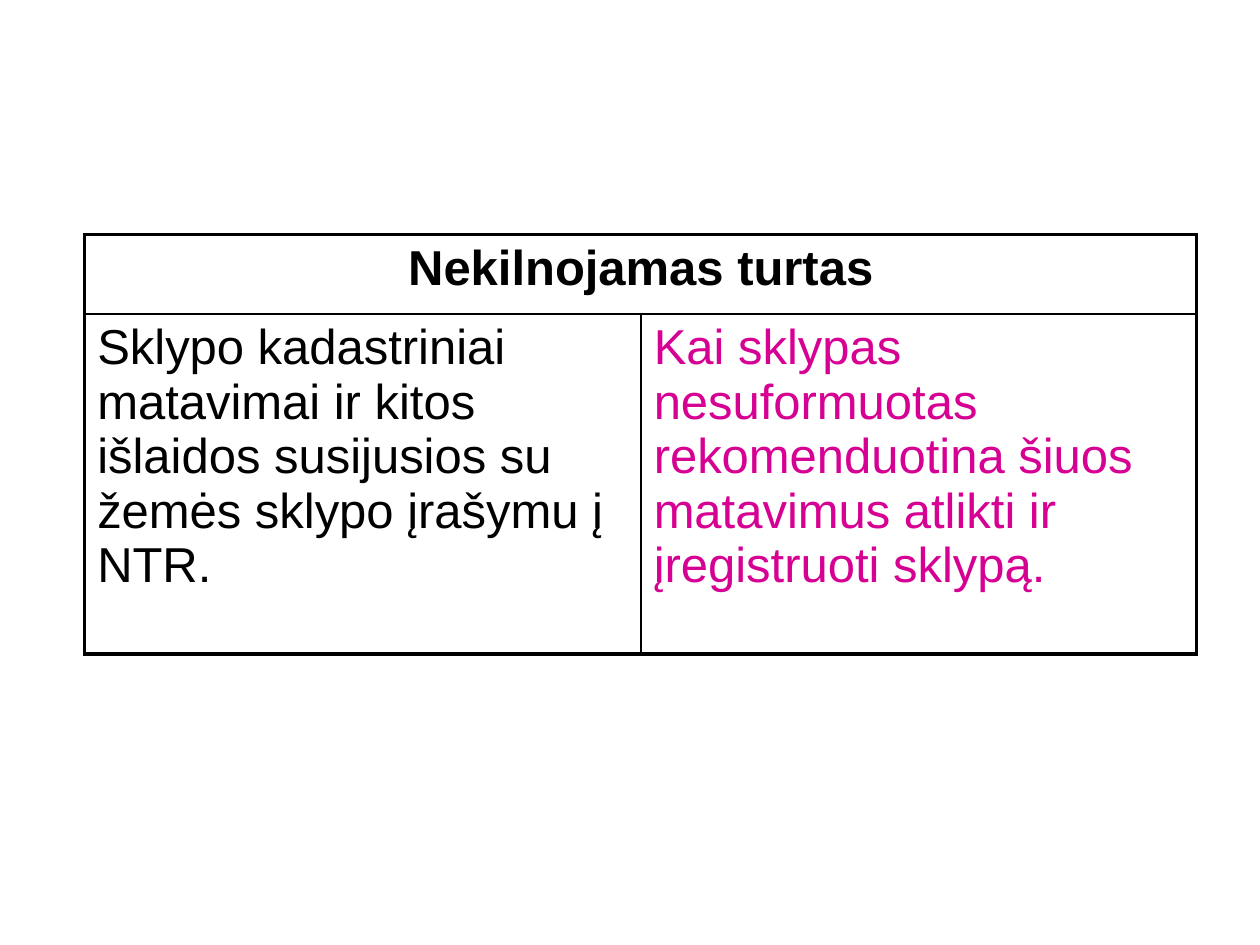
from dataclasses import dataclass

import pptx
import pptx.dml.color
import pptx.enum.text
import pptx.oxml
import pptx.oxml.ns
import pptx.table
import pptx.util

Pt = pptx.util.Pt
Align = pptx.enum.text.PP_ALIGN
BLACK, MAGENTA = "000000", "D60093"
OUTER, INNER = 2.25, 1
COLUMN_WIDTHS = (318, 317.5)
ROW_HEIGHTS = (45.4, 194.4)


@dataclass
class Entry:
    row: int
    column: int
    text: str
    color: str = BLACK
    bold: bool = False
    align: Align = Align.LEFT


ENTRIES = (
    Entry(0, 0, "Nekilnojamas turtas", bold=True, align=Align.CENTER),
    Entry(1, 0, "Sklypo kadastriniai matavimai ir kitos išlaidos susijusios su "
                "žemės sklypo įrašymu į NTR."),
    Entry(1, 1, "Kai sklypas nesuformuotas rekomenduotina šiuos matavimus atlikti ir "
                "įregistruoti sklypą.", color=MAGENTA),
)


def rgb(color: str) -> pptx.dml.color.RGBColor:
    return pptx.dml.color.RGBColor.from_string(color)


def draw_borders(cell: pptx.table._Cell, widths: dict[str, float]) -> None:
    properties = cell._tc.get_or_add_tcPr()
    for position, (side, width) in enumerate(widths.items()):
        border = pptx.oxml.parse_xml(
            f'<a:ln{side} {pptx.oxml.ns.nsdecls("a")} w="{int(Pt(width))}">'
            f'<a:solidFill><a:srgbClr val="{BLACK}"/></a:solidFill></a:ln{side}>'
        )
        properties.insert(position, border)


def write_entry(table: pptx.table.Table, entry: Entry) -> None:
    paragraph = table.cell(entry.row, entry.column).text_frame.paragraphs[0]
    paragraph.alignment = entry.align
    run = paragraph.add_run()
    run.text = entry.text
    run.font.name = "Arial"
    run.font.size = Pt(28)
    run.font.bold = entry.bold
    run.font.color.rgb = rgb(entry.color)


def main() -> None:
    """Build the slide with the real estate table."""
    deck = pptx.Presentation()
    deck.slide_width, deck.slide_height = Pt(720), Pt(540)
    slide = deck.slides.add_slide(deck.slide_layouts[6])
    estate = slide.shapes.add_table(
        len(ROW_HEIGHTS), len(COLUMN_WIDTHS), Pt(48.4), Pt(134),
        Pt(sum(COLUMN_WIDTHS)), Pt(sum(ROW_HEIGHTS)),
    ).table
    estate.first_row = estate.horz_banding = False
    for column, width in zip(estate.columns, COLUMN_WIDTHS):
        column.width = Pt(width)
    for row, height in zip(estate.rows, ROW_HEIGHTS):
        row.height = Pt(height)

    estate.cell(0, 0).merge(estate.cell(0, 1))
    for row in range(len(ROW_HEIGHTS)):
        for column in range(len(COLUMN_WIDTHS)):
            cell = estate.cell(row, column)
            cell.fill.background()
            heading = row == 0
            draw_borders(cell, {
                "L": OUTER if heading or column == 0 else INNER,
                "R": OUTER if heading or column == 1 else INNER,
                "T": OUTER if heading else INNER,
                "B": INNER if heading else OUTER,
            })
    for entry in ENTRIES:
        write_entry(estate, entry)
    deck.save("out.pptx")


if __name__ == "__main__":
    main()
